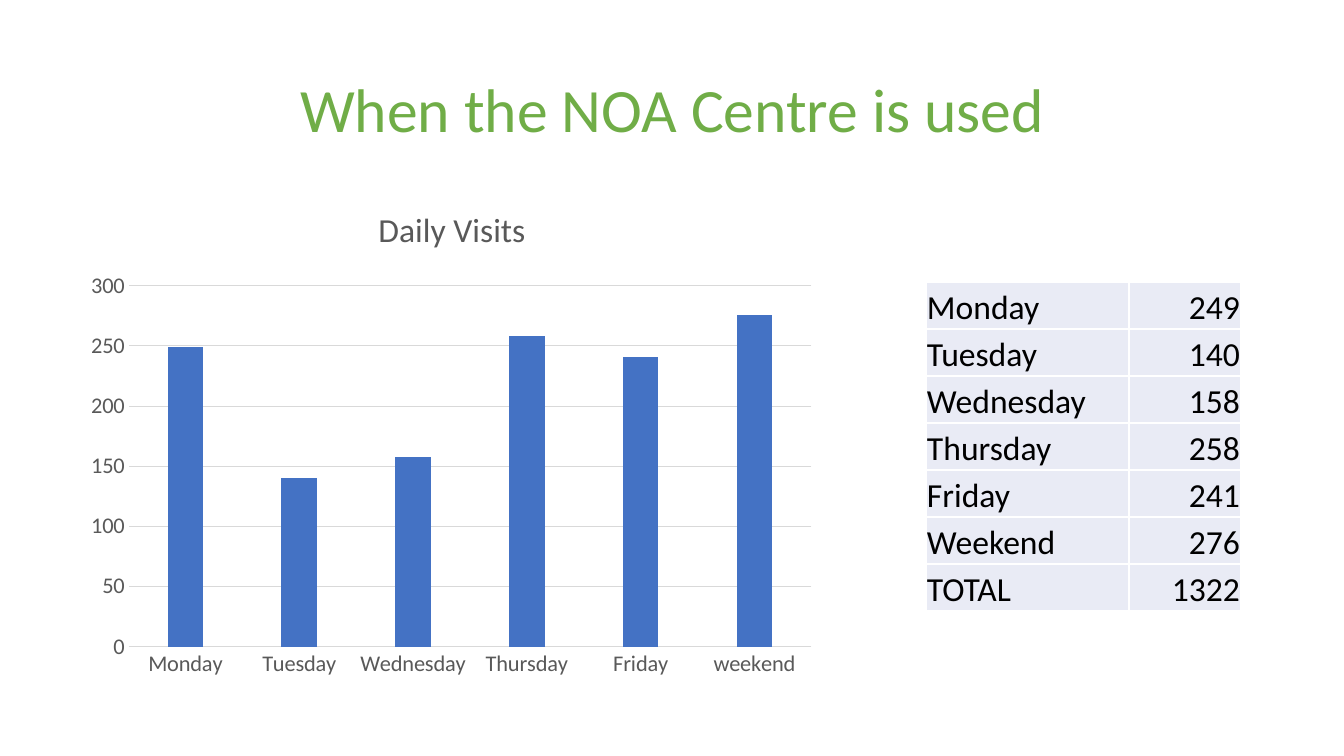
from lxml import etree
from pptx import Presentation, util as u
from pptx.chart.data import CategoryChartData
from pptx.dml.color import RGBColor
from pptx.enum import chart as ch, text
from pptx.oxml import parse_xml
from pptx.oxml.ns import nsdecls, qn

EMU_PER_PX = 914400 / 100.8
COLORS = {
    "title": "70AD47",
    "bar": "4472C4",
    "label": "595959",
    "grid": "D9D9D9",
    "cell": "E9EBF5",
    "border": "FFFFFF",
    "text": "000000",
}
VISITS = {"Monday": 249, "Tuesday": 140, "Wednesday": 158,
          "Thursday": 258, "Friday": 241, "Weekend": 276}


def px(length):
    return u.Emu(round(length * EMU_PER_PX))


def color(name):
    return RGBColor.from_string(COLORS[name])


class SlideBuilder:
    font_name = "Calibri"

    def __init__(self, presentation):
        self.slide = presentation.slides.add_slide(presentation.slide_layouts[6])

    def style(self, font, size, color_name):
        font.name = self.font_name
        font.size = u.Pt(size)
        font.bold = False
        font.color.rgb = color(color_name)

    def title(self, words, box):
        frame = self.slide.shapes.add_textbox(*map(px, box)).text_frame
        frame.word_wrap = True
        frame.vertical_anchor = text.MSO_ANCHOR.MIDDLE
        paragraph = frame.paragraphs[0]
        paragraph.text = words
        paragraph.alignment = text.PP_ALIGN.CENTER
        paragraph.line_spacing = 0.9
        self.style(paragraph.font, 44, "title")

    def column_chart(self, heading, categories, values, box, plot_box):
        data = CategoryChartData()
        data.categories = categories
        data.add_series("Series 1", values)
        chart = self.slide.shapes.add_chart(
            ch.XL_CHART_TYPE.COLUMN_CLUSTERED, *map(px, box), data).chart
        self.style(chart.font, 16, "text")
        chart.has_legend = False
        chart.has_title = True
        paragraph = chart.chart_title.text_frame.paragraphs[0]
        paragraph.text = heading
        self.style(paragraph.font, 24, "label")

        plot = chart.plots[0]
        plot.gap_width = 219
        plot.overlap = -27
        plot.vary_by_categories = False
        fill = plot.series[0].format.fill
        fill.solid()
        fill.fore_color.rgb = color("bar")

        for axis in (chart.category_axis, chart.value_axis):
            axis.major_tick_mark = axis.minor_tick_mark = ch.XL_TICK_MARK.NONE
            self.style(axis.tick_labels.font, 16, "label")
        chart.value_axis.minimum_scale = 0
        chart.value_axis.maximum_scale = 300
        chart.value_axis.major_unit = 50
        chart.value_axis.format.line.fill.background()
        for line in (chart.category_axis.format.line,
                     chart.value_axis.major_gridlines.format.line):
            line.color.rgb = color("grid")
            line.width = u.Pt(0.75)
        self.place_plot(chart, box, plot_box)

    def place_plot(self, chart, box, plot_box):
        """Fix the inner plot area at plot_box, given in slide px."""
        left, top, width, height = box
        x, y, w, h = plot_box
        shares = {"x": (x - left) / width, "y": (y - top) / height,
                  "w": w / width, "h": h / height}
        area = chart._chartSpace.find(".//" + qn("c:plotArea"))
        for old in area.findall(qn("c:layout")):
            area.remove(old)
        layout = parse_xml(f"<c:layout {nsdecls('c')}><c:manualLayout/></c:layout>")
        settings = {"layoutTarget": "inner", "xMode": "edge", "yMode": "edge"}
        settings.update({key: f"{share:.3f}" for key, share in shares.items()})
        for key, value in settings.items():
            etree.SubElement(layout[0], qn(f"c:{key}")).set("val", value)
        area.insert(0, layout)

    def table(self, rows, left, top, column_widths, row_height):
        table = self.slide.shapes.add_table(
            len(rows), len(column_widths), px(left), px(top),
            px(sum(column_widths)), px(row_height * len(rows))).table
        table.first_row = table.horz_banding = False
        for column, width in zip(table.columns, column_widths):
            column.width = px(width)
        alignments = (text.PP_ALIGN.LEFT, text.PP_ALIGN.RIGHT)
        for r, row in enumerate(rows):
            for c, value in enumerate(row):
                self.cell(table.cell(r, c), str(value), alignments[c])

    def cell(self, cell, words, alignment):
        cell.margin_left = cell.margin_right = cell.margin_top = px(1)
        cell.margin_bottom = 0
        cell.vertical_anchor = text.MSO_ANCHOR.BOTTOM
        paragraph = cell.text_frame.paragraphs[0]
        paragraph.text = words
        paragraph.alignment = alignment
        self.style(paragraph.font, 24, "text")
        properties = cell._tc.get_or_add_tcPr()
        for side in "LRTB":
            properties.append(parse_xml(
                f'<a:ln{side} {nsdecls("a")} w="12700"><a:solidFill>'
                f'<a:srgbClr val="{COLORS["border"]}"/></a:solidFill></a:ln{side}>'))
        cell.fill.solid()
        cell.fill.fore_color.rgb = color("cell")


def main():
    presentation = Presentation()
    presentation.slide_width = px(1344)
    presentation.slide_height = px(756)
    builder = SlideBuilder(presentation)
    builder.title("When the NOA Centre is used", (93, 40, 1159, 146))
    days = [day.replace("Weekend", "weekend") for day in VISITS]
    builder.column_chart("Daily Visits", days, list(VISITS.values()),
                         (76, 186, 752, 502), (129, 286, 683, 361))
    rows = [*VISITS.items(), ("TOTAL", sum(VISITS.values()))]
    builder.table(rows, 926, 282, (203, 112), 47)
    presentation.save("out.pptx")


if __name__ == "__main__":
    main()
